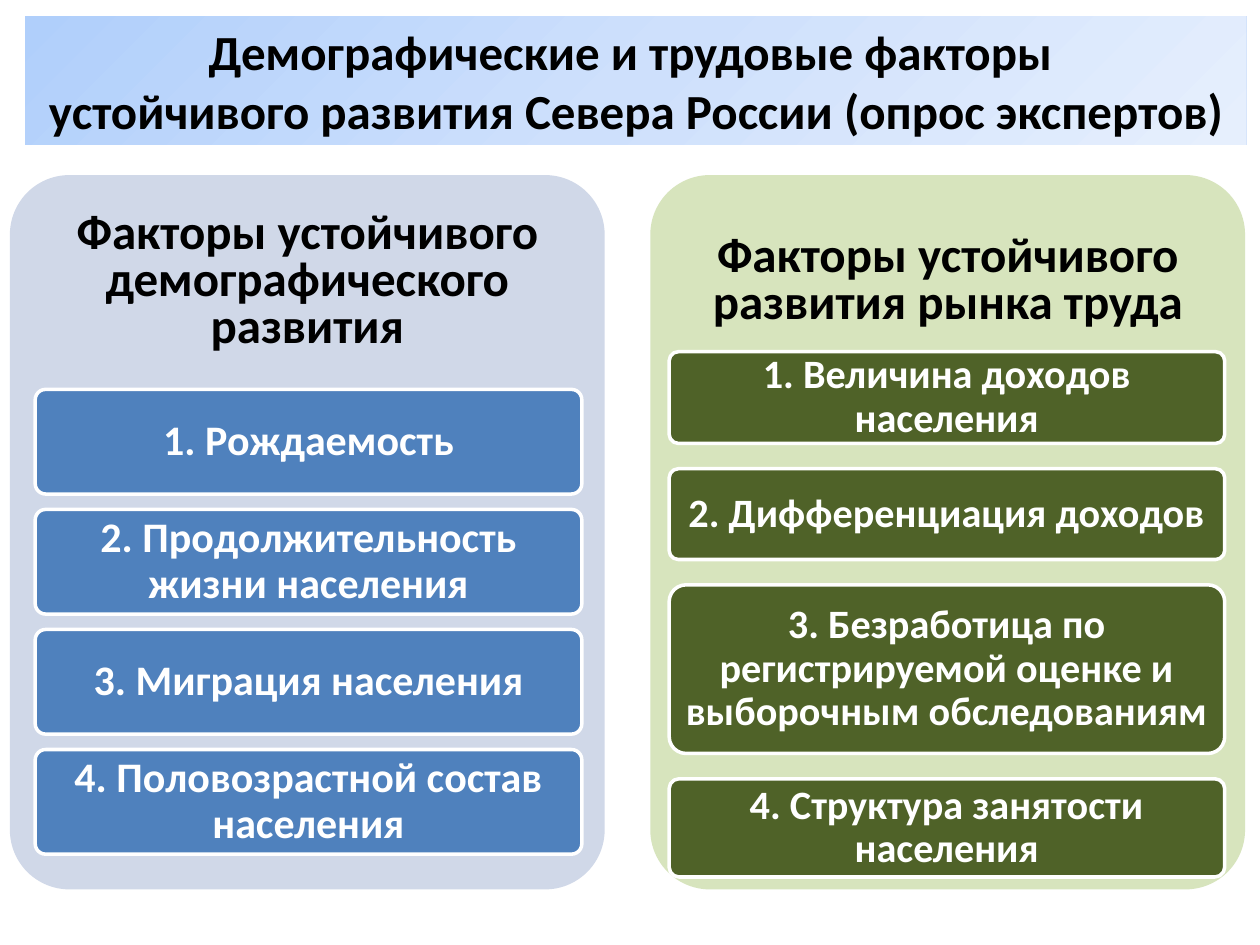
"""Build a slide on demographic and labour factors of the North's development."""
from copy import deepcopy

from pptx import Presentation
from pptx.dml.color import RGBColor
from pptx.enum.shapes import MSO_SHAPE
from pptx.enum.text import MSO_ANCHOR, PP_ALIGN
from pptx.util import Cm, Pt

HUES = {
    "start": "B0CFFB", "mid": "CEE0FC", "end": "E6EFFD",
    "pale": "D0D8E8", "blue": "4F81BD",
    "light": "D7E4BD", "green": "4F6228",
    "black": "000000", "white": "FFFFFF",
}
PANELS = [
    {
        "left": 0.2, "fill": "pale",
        "head": "Факторы устойчивого демографического развития",
        "bar": "blue", "inset": 0.51, "width": 11.02, "top": 7.85, "gap": 0.31, "size": 24,
        "items": [
            ("1. Рождаемость", 2.11),
            ("2. Продолжительность жизни населения", 2.11),
            ("3. Миграция населения", 2.11),
            ("4. Половозрастной состав населения", 2.11),
        ],
    },
    {
        "left": 13.11, "fill": "light",
        "head": "Факторы устойчивого развития рынка труда",
        "bar": "green", "inset": 0.38, "width": 11.2, "top": 7.09, "gap": 0.51, "size": 23,
        "items": [
            ("1. Величина доходов населения", 1.85),
            ("2. Дифференциация доходов", 1.83),
            ("3. Безработица по регистрируемой оценке и выборочным обследованиям", 3.4),
            ("4. Структура занятости населения", 1.98),
        ],
    },
]


def block(kind, box, fill):
    shape = slide.shapes.add_shape(kind, *map(Cm, box))
    shape.shadow.inherit = False
    shape.fill.solid()
    shape.fill.fore_color.rgb = RGBColor.from_string(HUES[fill])
    shape.line.fill.background()
    if kind == MSO_SHAPE.ROUNDED_RECTANGLE:
        shape.adjustments[0] = 0.1
    return shape


def write(shape, text, size, hue, space, side, edge):
    frame = shape.text_frame
    frame.word_wrap = True
    frame.vertical_anchor = MSO_ANCHOR.MIDDLE
    frame.margin_left = frame.margin_right = Cm(side)
    frame.margin_top = frame.margin_bottom = Cm(edge)
    frame.text = text
    para = frame.paragraphs[0]
    para.alignment = PP_ALIGN.CENTER
    para.line_spacing = space
    para.font.name = "Calibri"
    para.font.size = Pt(size)
    para.font.bold = True
    para.font.color.rgb = RGBColor.from_string(HUES[hue])


deck = Presentation()
deck.slide_width, deck.slide_height = Cm(25.4), Cm(19.05)
slide = deck.slides.add_slide(deck.slide_layouts[6])

title = block(MSO_SHAPE.RECTANGLE, (0.51, 0.33, 24.61, 2.59), "mid")
title.fill.gradient()
title.fill.gradient_angle = 315
stops = title.fill.gradient_stops
for stop, hue, place in zip(stops, ("start", "mid"), (0, 0.5)):
    stop.color.rgb = RGBColor.from_string(HUES[hue])
    stop.position = place
first, last = title.element.spPr.gradFill.gsLst
last.addnext(deepcopy(last))
final = title.fill.gradient_stops[2]
final.color.rgb = RGBColor.from_string(HUES["end"])
final.position = 1
write(title, "Демографические и трудовые факторы \vустойчивого развития Севера России (опрос экспертов)",
      28, "black", 1.0, 0.25, 0.13)

for panel in PANELS:
    left, top = panel["left"], panel["top"]
    block(MSO_SHAPE.ROUNDED_RECTANGLE, (left, 3.53, 11.99, 14.4), panel["fill"])
    head = slide.shapes.add_textbox(Cm(left), Cm(3.53), Cm(11.99), Cm(4.32))
    write(head, panel["head"], 28, "black", 0.8, 0.3, 0.3)
    for text, height in panel["items"]:
        box = (left + panel["inset"], top, panel["width"], height)
        bar = block(MSO_SHAPE.ROUNDED_RECTANGLE, box, panel["bar"])
        bar.line.color.rgb = RGBColor.from_string(HUES["white"])
        bar.line.width = Pt(2)
        write(bar, text, panel["size"], "white", 0.9, 0.1, 0.07)
        top += height + panel["gap"]

deck.save("out.pptx")
